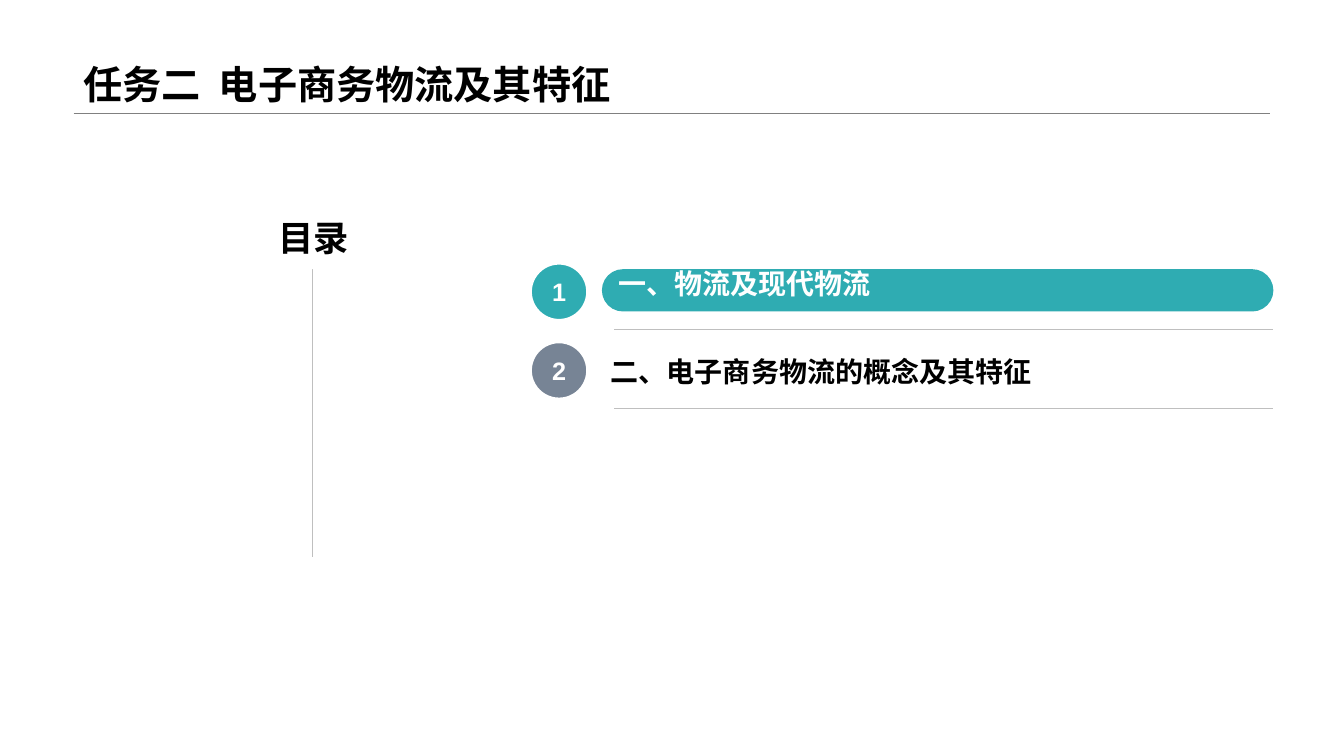
from lxml import etree
from pptx import Presentation
from pptx.dml.color import RGBColor
from pptx.enum.shapes import MSO_CONNECTOR, MSO_SHAPE
from pptx.enum.text import MSO_ANCHOR, MSO_AUTO_SIZE, PP_ALIGN
from pptx.oxml.ns import qn
from pptx.util import Inches, Pt

STRAIGHT = MSO_CONNECTOR.STRAIGHT
OVAL, RECT, PILL = MSO_SHAPE.OVAL, MSO_SHAPE.RECTANGLE, MSO_SHAPE.ROUNDED_RECTANGLE
TOP, MIDDLE, BOTTOM = MSO_ANCHOR.TOP, MSO_ANCHOR.MIDDLE, MSO_ANCHOR.BOTTOM
LEFT, CENTER, RIGHT = PP_ALIGN.LEFT, PP_ALIGN.CENTER, PP_ALIGN.RIGHT

BLACK, WHITE = "000000", "FFFFFF"
TEAL, SLATE = "2FACB2", "778495"
GRAY, PALE_GRAY = "808080", "BFBFBF"
ROW_TOP, ROW_STEP = 2.61, 0.78


def rgb(value):
    return RGBColor.from_string(value)


def set_all(target, values):
    for key, value in values.items():
        setattr(target, key, value)


def write(shape, text, size, color, align=LEFT, anchor=TOP, spacing=1.0):
    frame = shape.text_frame
    set_all(frame, {"word_wrap": True, "auto_size": MSO_AUTO_SIZE.NONE,
                    "vertical_anchor": anchor})
    paragraph = frame.paragraphs[0]
    set_all(paragraph, {"alignment": align, "line_spacing": spacing})
    run = paragraph.add_run()
    run.text = text
    set_all(run.font, {"name": "Arial", "size": Pt(size), "bold": True})
    run.font.color.rgb = rgb(color)


def add_rule(slide, x1, y1, x2, y2, color=PALE_GRAY):
    rule = slide.shapes.add_connector(
        STRAIGHT, Inches(x1), Inches(y1), Inches(x2), Inches(y2))
    rule.line.color.rgb = rgb(color)
    rule.line.width = Pt(0.25)
    etree.SubElement(rule.line._get_or_add_ln().getparent(), qn("a:effectLst"))


def add_block(slide, preset, box, fill):
    block = slide.shapes.add_shape(preset, *map(Inches, box))
    block.shadow.inherit = False
    block.fill.solid()
    block.fill.fore_color.rgb = rgb(fill)
    block.line.fill.background()
    return block


def add_title(slide, text):
    title = slide.shapes.title
    set_all(title, {"left": Inches(0.73), "top": Inches(0),
                    "width": Inches(11.87), "height": Inches(1.12)})
    write(title, text, 28, BLACK, anchor=BOTTOM, spacing=0.9)


def add_number(slide, number, top, fill):
    badge = add_block(slide, OVAL, (5.26, top, 0.57, 0.57), fill)
    badge.line.color.rgb = rgb(WHITE)
    badge.line.width = Pt(2.25)
    write(badge, str(number), 18, WHITE, CENTER, MIDDLE)


def main():
    deck = Presentation()
    set_all(deck, {"slide_width": Inches(13.33), "slide_height": Inches(7.5)})
    slide = deck.slides.add_slide(deck.slide_layouts[5])

    add_title(slide, "任务二  电子商务物流及其特征")
    add_rule(slide, 0.73, 1.12, 12.6, 1.12, GRAY)

    for index, fill in enumerate((TEAL, SLATE)):
        top = ROW_TOP + index * ROW_STEP
        add_number(slide, index + 1, top, fill)
        add_rule(slide, 6.09, top + 0.66, 12.63, top + 0.66)

    add_rule(slide, 3.1, 2.15, 3.1, 5.53)
    contents = add_block(slide, RECT, (1.65, 2.1, 1.91, 0.57), WHITE)
    write(contents, "目录", 25.2, BLACK, RIGHT)

    current_topic = add_block(slide, PILL, (5.97, 2.67, 6.66, 0.42), TEAL)
    current_topic.adjustments[0] = 0.5
    write(current_topic, "一、物流及现代物流", 20, WHITE, anchor=BOTTOM, spacing=1.1)

    next_topic = slide.shapes.add_textbox(*map(Inches, (5.96, 3.48, 6.66, 0.42)))
    write(next_topic, "二、电子商务物流的概念及其特征", 20, BLACK, anchor=BOTTOM)

    deck.save("out.pptx")


if __name__ == "__main__":
    main()
